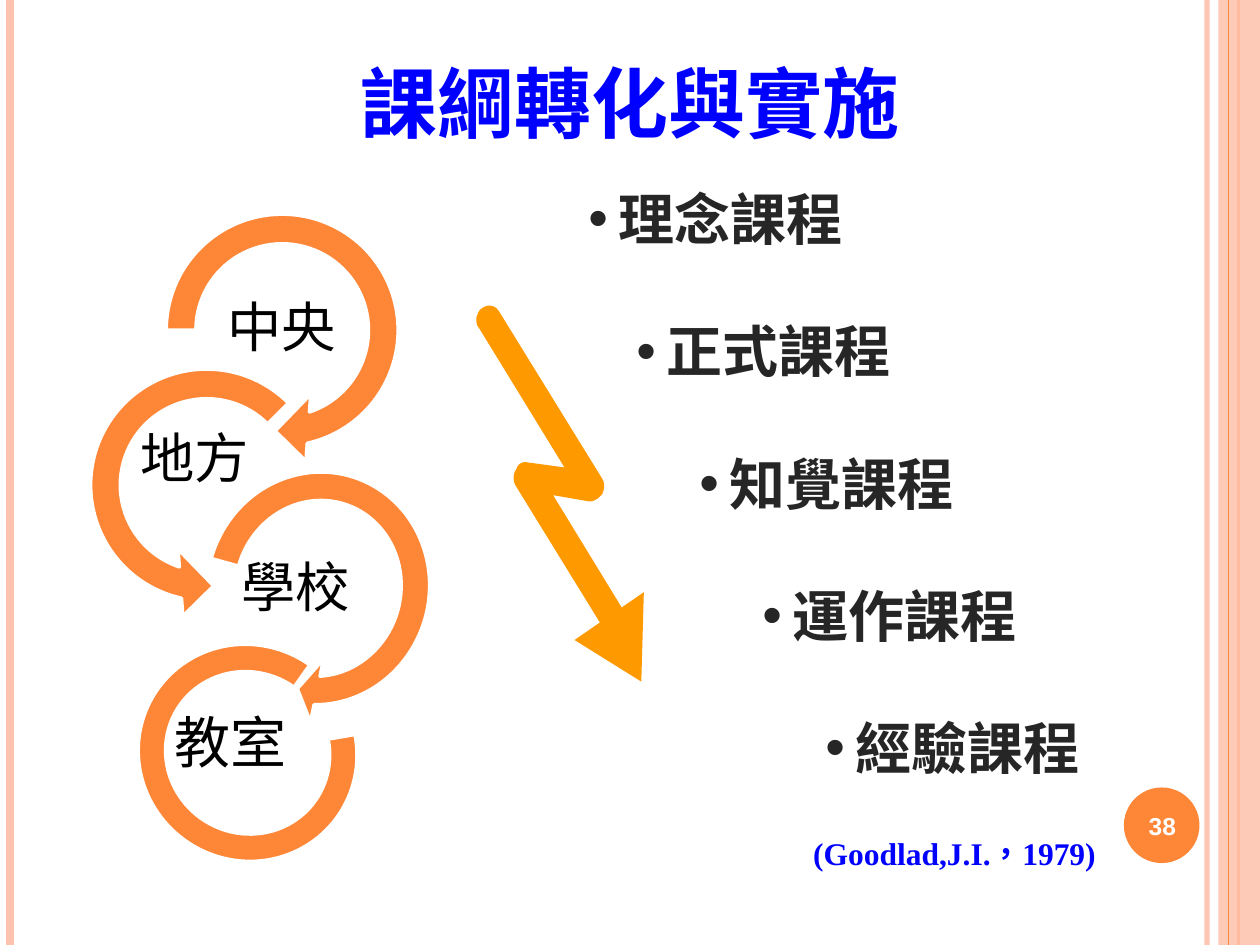
from lxml.etree import SubElement
from pptx import Presentation
from pptx.dml.color import RGBColor
from pptx.enum.shapes import MSO_CONNECTOR, MSO_SHAPE
from pptx.enum.text import MSO_ANCHOR as Anchor, PP_ALIGN as Align
from pptx.oxml.ns import qn
from pptx.util import Inches, Pt

COLORS = {
    "orange": "FE8637", "peach": "FEC3AE", "amber": "FF9900", "blue": "0000FF",
    "dark": "262626", "black": "000000", "white": "FFFFFF",
}
CJK = "Noto Sans CJK SC"
CURVE_STEPS = 6
HANGING = 0.24


def rgb(name):
    return RGBColor.from_string(COLORS[name])


def set_alpha(properties, percent):
    color = next(properties.iter(qn("a:srgbClr")))
    SubElement(color, qn("a:alpha"), val=str(percent * 1000))


def paint(shape, fill, line=None):
    shape.shadow.inherit = False
    shape.fill.solid()
    shape.fill.fore_color.rgb = rgb(fill)
    if line:
        shape.line.color.rgb = rgb(line)
        shape.line.width = Pt(2)
    else:
        shape.line.fill.background()


def add_shape(slide, kind, box, fill, line=None, adjustments=(), rotation=0):
    shape = slide.shapes.add_shape(kind, *map(Inches, box))
    paint(shape, fill, line)
    for index, value in enumerate(adjustments):
        shape.adjustments[index] = value
    shape.rotation = rotation
    return shape


def add_rule(slide, x, color, width):
    rule = slide.shapes.add_connector(
        MSO_CONNECTOR.STRAIGHT, Inches(x), 0, Inches(x), Inches(7.5))
    rule.line.color.rgb = rgb(color)
    rule.line.width = Pt(width)
    SubElement(rule._element.spPr, qn("a:effectLst"))
    return rule


def add_run(paragraph, text, size, font, color, bold=False, language=None):
    run = paragraph.add_run()
    run.text = text
    run.font.size = Pt(size)
    run.font.name = font
    run.font.bold = bold
    run.font.color.rgb = rgb(color)
    properties = run._r.get_or_add_rPr()
    if font == CJK:
        SubElement(properties, qn("a:ea"), typeface=CJK)
    if language:
        properties.set("lang", language)


def add_text(slide, box, text, size, font, color, bold=False, align=Align.CENTER,
             anchor=Anchor.TOP, wrap=True, inset=None, spacing=None, language=None):
    frame = slide.shapes.add_textbox(*map(Inches, box)).text_frame
    frame.word_wrap = wrap
    frame.vertical_anchor = anchor
    if inset is not None:
        frame.margin_left = frame.margin_right = Inches(inset)
        frame.margin_top = frame.margin_bottom = Inches(inset)
    paragraph = frame.paragraphs[0]
    paragraph.alignment = align
    if spacing:
        paragraph.line_spacing = spacing
    add_run(paragraph, text, size, font, color, bold, language)


def add_stepped_bullets(slide, box, items):
    frame = slide.shapes.add_textbox(*map(Inches, box)).text_frame
    frame.word_wrap = True
    for step, item in enumerate(items):
        paragraph = frame.paragraphs[0] if step == 0 else frame.add_paragraph()
        paragraph.alignment = Align.CENTER
        paragraph.level = 2 * step
        paragraph.line_spacing = 1.5
        if step:
            paragraph.space_before = Pt(18)
        properties = paragraph._p.get_or_add_pPr()
        properties.set("marL", str(Inches(step or HANGING)))
        properties.set("indent", str(Inches(-HANGING)))
        bullet_color = SubElement(properties, qn("a:buClr"))
        SubElement(bullet_color, qn("a:srgbClr"), val=COLORS["dark"])
        SubElement(properties, qn("a:buFont"), typeface="Arial")
        SubElement(properties, qn("a:buChar"), char="•")
        add_run(paragraph, item, 32, CJK, "dark", True)


def curve(start, control_1, control_2, end):
    """Points along a cubic curve, without its start."""
    points = []
    for step in range(1, CURVE_STEPS + 1):
        t = step / CURVE_STEPS
        weights = ((1 - t) ** 3, 3 * t * (1 - t) ** 2, 3 * t * t * (1 - t), t ** 3)
        points.append(tuple(
            sum(w * p for w, p in zip(weights, axis))
            for axis in zip(start, control_1, control_2, end)))
    return points


def add_outline(slide, start, segments, fill):
    """Each segment is a line's end, or a curve's two controls and end."""
    points = [start]
    for segment in segments:
        if len(segment) == 1:
            points += segment
        else:
            points += curve(points[-1], *segment)
    builder = slide.shapes.build_freeform(*map(Inches, start))
    builder.add_line_segments(
        [(Inches(x), Inches(y)) for x, y in points[1:]], close=True)
    paint(builder.convert_to_shape(), fill)


def add_title(slide, text):
    title = slide.shapes.title
    title.left, title.top, title.width, title.height = map(
        Inches, (1.49, 0.47, 7.03, 0.68))
    title.text_frame.vertical_anchor = Anchor.MIDDLE
    paragraph = title.text_frame.paragraphs[0]
    paragraph.alignment = Align.CENTER
    add_run(paragraph, text, 44, CJK, "blue", True)


def add_frame(slide):
    set_alpha(add_rule(slide, 9.58, "peach", 3)._element.spPr, 93)
    add_rule(slide, 0.08, "peach", 4.5)
    add_rule(slide, 9.83, "orange", 1.5)
    band = add_shape(slide, MSO_SHAPE.RECTANGLE, (9.67, 0, 0.33, 7.5), "peach")
    set_alpha(band._element.spPr, 87)
    add_rule(slide, 9.75, "orange", 0.75)
    add_shape(slide, MSO_SHAPE.OVAL, (8.92, 6.25, 0.6, 0.6), "orange")
    add_text(slide, (8.89, 6.27, 0.67, 0.57), "38", 14, "Arial", "white", True,
             anchor=Anchor.MIDDLE)


def add_zigzag_arrow(slide):
    add_outline(slide, (3.78, 2.52), [
        [(3.79, 2.5), (3.8, 2.46), (3.82, 2.45)],
        [(3.87, 2.41), (3.93, 2.42), (3.96, 2.47)],
        [(4.78, 3.8)],
        [(4.8, 3.83), (4.8, 3.88), (4.78, 3.92)],
        [(4.75, 3.96), (4.71, 3.98), (4.68, 3.98)],
        [(4.39, 3.93)],
        [(4.97, 4.88)],
        [(5, 4.93), (4.99, 5.01), (4.94, 5.05)],
        [(4.9, 5.08), (4.84, 5.07), (4.81, 5.02)],
        [(4.09, 3.85)],
        [(4.07, 3.81), (4.07, 3.76), (4.1, 3.72)],
        [(4.11, 3.68), (4.15, 3.66), (4.19, 3.67)],
        [(4.48, 3.71)],
        [(3.8, 2.6)],
        [(3.78, 2.58), (3.78, 2.55), (3.78, 2.52)],
    ], "amber")
    add_outline(slide, (4.56, 5.08), [[(5.09, 5.41)], [(5.11, 4.7)]], "amber")


def add_level_cycle(slide):
    arcs = [
        (MSO_SHAPE.CIRCULAR_ARROW, (1.17, 1.55, 2.14, 2.14),
         (0.11, 11.423, 45, 108, 0.125), 0),
        (MSO_SHAPE.LEFT_CIRCULAR_ARROW, (0.57, 2.78, 2.14, 2.14),
         (0.11, 11.423, 63, 189, 0.125), 0),
        (MSO_SHAPE.BLOCK_ARC, (1.11, 5.1, 1.71, 1.75), (135, 108, 0.127), 125.3),
        (MSO_SHAPE.CIRCULAR_ARROW, (1.5, 3.6, 2.05, 2.14),
         (0.11, 6.694, 45, 108, 0.125), 15.6),
    ]
    for kind, box, adjustments, rotation in arcs:
        add_shape(slide, kind, box, "orange", "white", adjustments, rotation)
    labels = [
        ("中央", (1.64, 2.32, 1.19, 0.59)),
        ("地方", (0.95, 3.37, 1.19, 0.58)),
        ("學校", (1.75, 4.36, 1.19, 0.65)),
    ]
    for text, box in labels:
        add_text(slide, box, text, 31, "Cambria", "black", anchor=Anchor.MIDDLE,
                 inset=0.02, spacing=0.9)
    add_text(slide, (1.19, 5.57, 1.22, 0.64), " 教室", 32, "Arial", "black",
             align=Align.LEFT, wrap=False)


def main():
    presentation = Presentation()
    presentation.slide_width, presentation.slide_height = Inches(10), Inches(7.5)
    slide = presentation.slides.add_slide(presentation.slide_layouts[5])
    add_frame(slide)
    # Curriculum levels, each one step further right
    add_stepped_bullets(slide, (2.56, 1.15, 6.24, 5.17), [
        "理念課程", "正式課程", "知覺課程", "運作課程", "經驗課程"])
    add_zigzag_arrow(slide)
    add_title(slide, "課綱轉化與實施")
    # Citation
    add_text(slide, (6.34, 6.57, 2.47, 0.4), "(Goodlad,J.I.，1979)", 18,
             "Times New Roman", "blue", True, language="zh-TW")
    add_level_cycle(slide)
    presentation.save("out.pptx")


if __name__ == "__main__":
    main()
